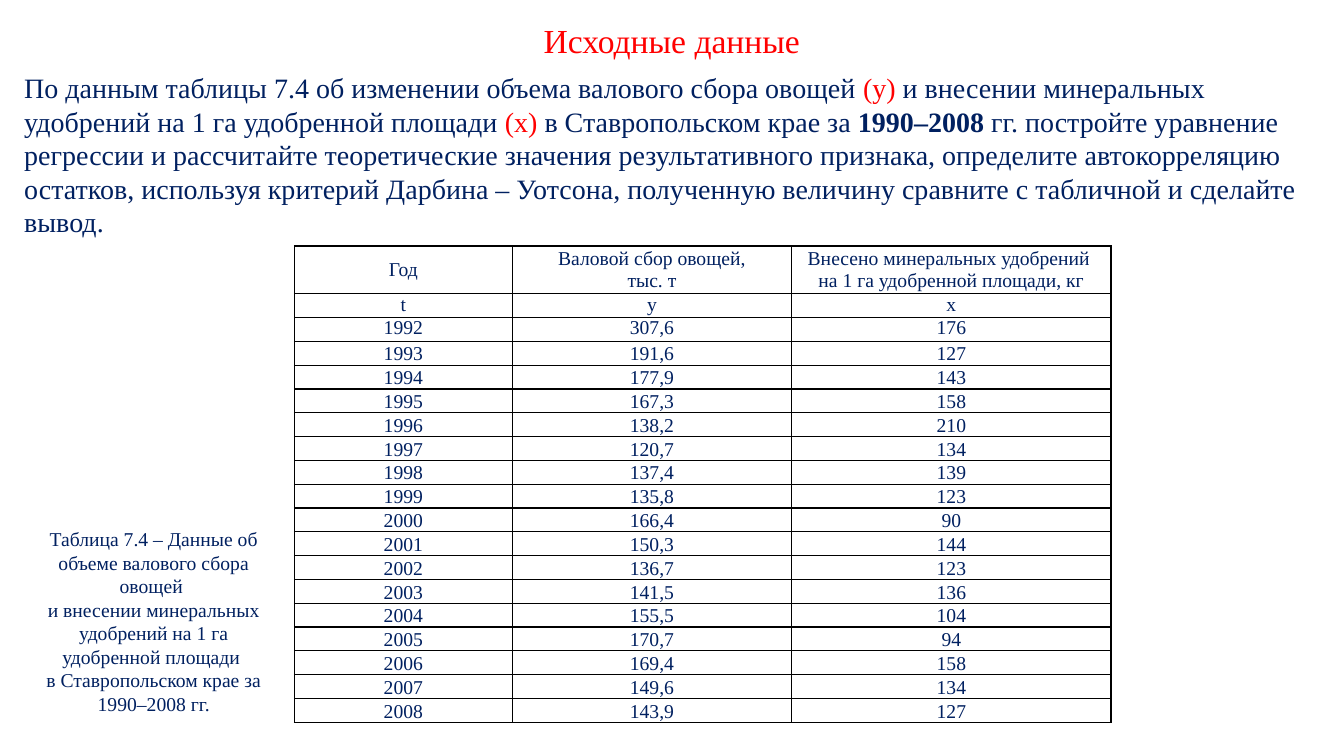
from dataclasses import dataclass

import pptx
import pptx.dml.color
import pptx.enum.text
import pptx.oxml
import pptx.oxml.ns
import pptx.util
from pptx.enum.text import MSO_ANCHOR, PP_ALIGN
from pptx.util import Cm


@dataclass(frozen=True)
class Theme:
    font: str = "Times New Roman"
    ink: str = "002060"
    accent: str = "FF0000"
    grid: str = "000000"
    title_size: int = 24
    body_size: int = 20
    table_size: int = 14
    grid_width: int = 1


@dataclass(frozen=True)
class Span:
    text: str
    size: int
    color: str
    bold: bool = False


@dataclass(frozen=True)
class TextBlock:
    left: float
    top: float
    width: float
    height: float
    spans: list[Span]
    align: PP_ALIGN = PP_ALIGN.CENTER
    anchor: MSO_ANCHOR = MSO_ANCHOR.TOP
    wrap: bool = True


THEME = Theme()

TITLE = TextBlock(
    13.41, 0.38, 7.04, 1.27,
    [Span("Исходные данные", THEME.title_size, THEME.accent)], wrap=False)

TASK = TextBlock(0.36, 1.65, 33.17, 4.52, [
    Span("По данным таблицы 7.4 об изменении объема валового сбора овощей ",
         THEME.body_size, THEME.ink),
    Span("(y) ", THEME.body_size, THEME.accent),
    Span("и внесении минеральных удобрений на 1 га удобренной площади ",
         THEME.body_size, THEME.ink),
    Span("(x) ", THEME.body_size, THEME.accent),
    Span("в Ставропольском крае за ", THEME.body_size, THEME.ink),
    Span("1990–2008 ", THEME.body_size, THEME.ink, bold=True),
    Span("гг. постройте уравнение регрессии и рассчитайте теоретические значения "
         "результативного признака, определите автокорреляцию остатков, используя "
         "критерий Дарбина – Уотсона, полученную величину сравните с табличной и "
         "сделайте вывод.", THEME.body_size, THEME.ink),
], align=PP_ALIGN.LEFT)

CAPTION = TextBlock(0.61, 13.13, 6.53, 5.05, [
    Span("Таблица 7.4 – Данные об объеме валового сбора овощей \n"
         "и внесении минеральных удобрений на 1 га удобренной площади \n"
         "в Ставропольском крае за 1990–2008 гг.", THEME.table_size, THEME.ink),
], anchor=MSO_ANCHOR.MIDDLE)

# Each heading is a list of paragraphs.
HEADINGS = [
    ["Год"],
    ["Валовой сбор овощей,", "тыс. т"],
    ["Внесено минеральных удобрений \nна 1 га удобренной площади, кг"],
]
SYMBOLS = ["t", "y", "x"]
FIRST_YEAR = 1992
HARVEST = ["307,6", "191,6", "177,9", "167,3", "138,2", "120,7", "137,4", "135,8", "166,4",
           "150,3", "136,7", "141,5", "155,5", "170,7", "169,4", "149,6", "143,9"]
FERTILIZER = [176, 127, 143, 158, 210, 134, 139, 123, 90,
              144, 123, 136, 104, 94, 158, 134, 127]

TABLE_LEFT, TABLE_TOP = 7.42, 6.2
COLUMN_WIDTHS = [5.49, 7.04, 8.05]
HEADING_HEIGHT, ROW_HEIGHT = 1.2, 0.6
CELL_MARGIN = 0.18


def add_span(paragraph, span: Span) -> None:
    """Add the span as runs, with a line break at each newline."""
    for index, line in enumerate(span.text.split("\n")):
        if index:
            paragraph.add_line_break()
        run = paragraph.add_run()
        run.text = line
        run.font.name = THEME.font
        run.font.size = pptx.util.Pt(span.size)
        run.font.bold = span.bold
        run.font.color.rgb = pptx.dml.color.RGBColor.from_string(span.color)


def add_text_block(slide, block: TextBlock) -> None:
    frame = slide.shapes.add_textbox(
        Cm(block.left), Cm(block.top), Cm(block.width), Cm(block.height)).text_frame
    frame.word_wrap = block.wrap
    frame.auto_size = pptx.enum.text.MSO_AUTO_SIZE.SHAPE_TO_FIT_TEXT
    frame.vertical_anchor = block.anchor
    paragraph = frame.paragraphs[0]
    paragraph.alignment = block.align
    for span in block.spans:
        add_span(paragraph, span)


def add_borders(cell) -> None:
    """Put grid lines before the cell's fill, as the schema orders them."""
    properties = cell._tc.get_or_add_tcPr()
    for position, side in enumerate(("lnL", "lnR", "lnT", "lnB")):
        properties.insert(position, pptx.oxml.parse_xml(
            f'<a:{side} {pptx.oxml.ns.nsdecls("a")} w="{pptx.util.Pt(THEME.grid_width)}">'
            f'<a:solidFill><a:srgbClr val="{THEME.grid}"/></a:solidFill></a:{side}>'))


def fill_cell(cell, lines: list[str], anchor: MSO_ANCHOR) -> None:
    cell.fill.background()
    add_borders(cell)
    cell.vertical_anchor = anchor
    cell.margin_left = cell.margin_right = Cm(CELL_MARGIN)
    cell.margin_top = cell.margin_bottom = 0
    frame = cell.text_frame
    for index, line in enumerate(lines):
        paragraph = frame.add_paragraph() if index else frame.paragraphs[0]
        paragraph.alignment = PP_ALIGN.CENTER
        add_span(paragraph, Span(line, THEME.table_size, THEME.ink))


def add_harvest_table(slide) -> None:
    records = [[str(FIRST_YEAR + offset), harvest, str(fertilizer)]
               for offset, (harvest, fertilizer) in enumerate(zip(HARVEST, FERTILIZER))]
    rows = [HEADINGS] + [[[value] for value in row] for row in [SYMBOLS, *records]]
    heights = [HEADING_HEIGHT] + [ROW_HEIGHT] * (len(rows) - 1)
    table = slide.shapes.add_table(
        len(rows), len(COLUMN_WIDTHS), Cm(TABLE_LEFT), Cm(TABLE_TOP),
        Cm(sum(COLUMN_WIDTHS)), Cm(sum(heights))).table
    table.first_row = table.horz_banding = False
    for column, width in zip(table.columns, COLUMN_WIDTHS):
        column.width = Cm(width)
    # The heading is centred; the symbols and the first year sit at the top.
    anchors = [MSO_ANCHOR.MIDDLE, MSO_ANCHOR.TOP, MSO_ANCHOR.TOP]
    anchors += [MSO_ANCHOR.BOTTOM] * (len(rows) - len(anchors))
    for row, values, height, anchor in zip(table.rows, rows, heights, anchors):
        row.height = Cm(height)
        for cell, lines in zip(row.cells, values):
            fill_cell(cell, lines, anchor)


def main() -> None:
    presentation = pptx.Presentation()
    presentation.slide_width, presentation.slide_height = Cm(33.87), Cm(19.05)
    slide = presentation.slides.add_slide(presentation.slide_layouts[6])
    add_text_block(slide, TITLE)
    add_text_block(slide, TASK)
    add_harvest_table(slide)
    add_text_block(slide, CAPTION)
    presentation.save("out.pptx")


if __name__ == "__main__":
    main()
